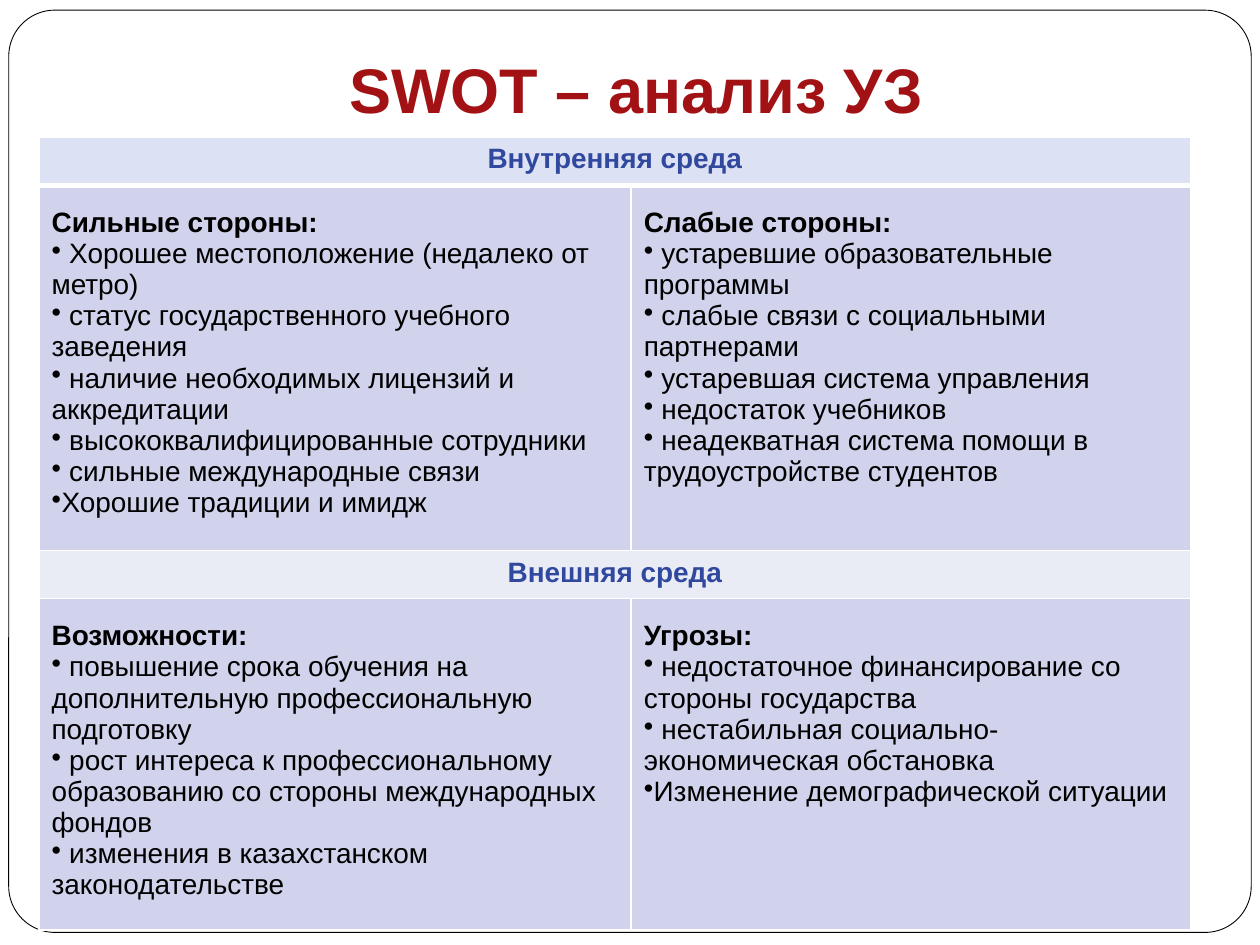
import pptx
import pptx.dml.color
import pptx.enum.shapes
import pptx.enum.text
import pptx.oxml.ns
import pptx.util
from lxml import etree

Pt = pptx.util.Pt
ALIGN = pptx.enum.text.PP_ALIGN

TITLE = "SWOT – анализ УЗ"
# Each section: banner, banner colour, then (heading, items) for each column.
SECTIONS = [
    ("Внутренняя среда", "banner_blue", [
        ("Сильные стороны:", [
            " Хорошее местоположение (недалеко от метро)",
            " статус государственного учебного заведения",
            " наличие необходимых лицензий и аккредитации",
            " высококвалифицированные сотрудники",
            " сильные международные связи",
            "Хорошие традиции и имидж",
        ]),
        ("Слабые стороны:", [
            " устаревшие образовательные программы",
            " слабые связи с социальными партнерами",
            " устаревшая система управления",
            " недостаток учебников",
            " неадекватная система помощи в трудоустройстве студентов",
        ]),
    ]),
    ("Внешняя среда", "banner_grey", [
        ("Возможности:", [
            " повышение срока обучения на дополнительную профессиональную подготовку",
            " рост интереса к профессиональному образованию со стороны международных фондов",
            " изменения в казахстанском законодательстве",
        ]),
        ("Угрозы:", [
            " недостаточное финансирование со стороны государства",
            " нестабильная социально-экономическая обстановка",
            "Изменение демографической ситуации",
        ]),
    ]),
]
COLORS = {
    "title": "A21215", "banner_text": "31489F", "text": "000000",
    "banner_blue": "DCE1F4", "banner_grey": "E9EBF5", "body": "D0D3EB",
    "white": "FFFFFF", "outline": "000000",
}
FONT = "Arial"
COLUMN_WIDTHS = [338.4, 319.7]
ROW_HEIGHTS = [27.4, 208.8, 27.4, 189.4]
TABLE_LEFT, TABLE_TOP = 22.3, 78.5
HEADING_GAP = 9


def color(name):
    return pptx.dml.color.RGBColor.from_string(COLORS[name])


def style(para, size, color_name, bold, align):
    para.alignment = align
    for span in para.runs:
        span.font.name = FONT
        span.font.size = Pt(size)
        span.font.bold = bold
        span.font.color.rgb = color(color_name)


def add_bullet(para):
    properties = para._p.get_or_add_pPr()
    properties.set("marL", "0")
    properties.set("indent", "0")
    bullet = etree.SubElement(properties, pptx.oxml.ns.qn("a:buChar"))
    bullet.set("char", "•")


def set_borders(cell, widths):
    """Draw white borders; widths maps the sides L, R, T, B to points."""
    properties = cell._tc.get_or_add_tcPr()
    for side, width in widths.items():
        line = etree.SubElement(properties, pptx.oxml.ns.qn(f"a:ln{side}"), w=str(Pt(width)))
        fill = etree.SubElement(line, pptx.oxml.ns.qn("a:solidFill"))
        etree.SubElement(fill, pptx.oxml.ns.qn("a:srgbClr"), val=COLORS["white"])


def fill_cell(cell, color_name):
    cell.fill.solid()
    cell.fill.fore_color.rgb = color(color_name)


def write_list(cell, heading, items):
    cell.margin_top = Pt(3.6 + HEADING_GAP)
    frame = cell.text_frame
    frame.text = "\n".join([heading] + items)
    for index, para in enumerate(frame.paragraphs):
        style(para, 16, "text", index == 0, ALIGN.LEFT)
        if index:
            add_bullet(para)


def add_frame(page):
    frame = page.shapes.add_shape(
        pptx.enum.shapes.MSO_SHAPE.ROUNDED_RECTANGLE, Pt(5), Pt(5.8), Pt(710), Pt(527))
    frame.adjustments[0] = 0.05
    frame.shadow.inherit = False
    frame.fill.solid()
    frame.fill.fore_color.rgb = color("white")
    frame.line.color.rgb = color("outline")
    frame.line.width = Pt(0.5)
    page.shapes.title._element.addprevious(frame._element)


def format_title(title):
    title.left, title.top, title.width, title.height = Pt(39.6), Pt(11.5), Pt(648), Pt(67.7)
    frame = title.text_frame
    frame.text = TITLE
    frame.vertical_anchor = pptx.enum.text.MSO_ANCHOR.BOTTOM
    frame.auto_size = pptx.enum.text.MSO_AUTO_SIZE.NONE
    frame.margin_bottom = Pt(7.2)
    style(frame.paragraphs[0], 36, "title", True, ALIGN.CENTER)


def add_swot_table(page):
    table = page.shapes.add_table(
        len(ROW_HEIGHTS), len(COLUMN_WIDTHS), Pt(TABLE_LEFT), Pt(TABLE_TOP),
        Pt(sum(COLUMN_WIDTHS)), Pt(sum(ROW_HEIGHTS))).table
    table.first_row = table.horz_banding = False
    for column, width in zip(table.columns, COLUMN_WIDTHS):
        column.width = Pt(width)
    for index, (row, height) in enumerate(zip(table.rows, ROW_HEIGHTS)):
        row.height = Pt(height)
        for cell in row.cells:
            set_borders(cell, {"L": 1, "R": 1, "T": 3 if index == 1 else 1,
                               "B": 3 if index == 0 else 1})
    for index, (banner, banner_color, lists) in enumerate(SECTIONS):
        banner_cell = table.cell(2 * index, 0)
        banner_cell.merge(table.cell(2 * index, 1))
        banner_cell.text_frame.text = banner
        style(banner_cell.text_frame.paragraphs[0], 16, "banner_text", True, ALIGN.CENTER)
        fill_cell(banner_cell, banner_color)
        for column, (heading, items) in enumerate(lists):
            cell = table.cell(2 * index + 1, column)
            write_list(cell, heading, items)
            fill_cell(cell, "body")


def main():
    deck = pptx.Presentation()
    deck.slide_width, deck.slide_height = Pt(720), Pt(540)
    page = deck.slides.add_slide(deck.slide_layouts[5])
    add_frame(page)
    format_title(page.shapes.title)
    add_swot_table(page)
    deck.save("out.pptx")


if __name__ == "__main__":
    main()
